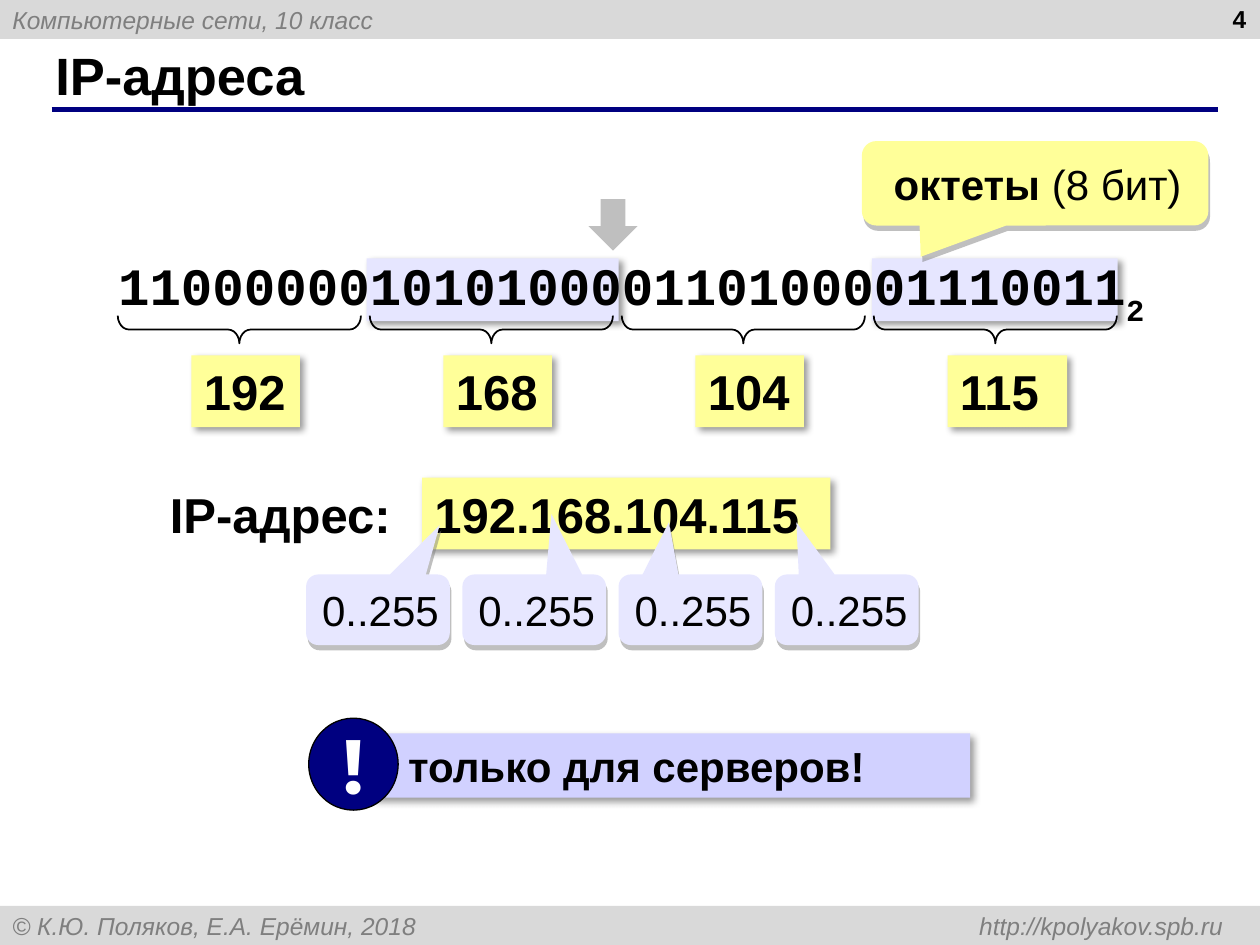
"""Build the slide on IP addresses and their octets."""
from lxml.etree import SubElement
from pptx import Presentation
from pptx.dml.color import RGBColor
from pptx.enum.shapes import MSO_CONNECTOR, MSO_SHAPE
from pptx.enum.text import MSO_ANCHOR, PP_ALIGN
from pptx.oxml.ns import qn
from pptx.util import Inches, Pt

SOFT = ("000000", 40, 4, 3, 45)
HARD = ("808080", 50, 0, 3.2, 72)
CALL = (0.06, 0.05, 0.02, 0.05)
YELLOW, LILAC, NAVY, GREY = "FFFF99", "E7E7FF", "000080", "D9D9D9"
LEFT, MID, RIGHT = PP_ALIGN.LEFT, PP_ALIGN.CENTER, PP_ALIGN.RIGHT
color = RGBColor.from_string

deck = Presentation()
deck.slide_width, deck.slide_height = Inches(10), Inches(7.5)
slide = deck.slides.add_slide(deck.slide_layouts[5])
shapes = slide.shapes


def draw(kind, place, fill=None, line=None, width=1, shade=None, adj=()):
    """Add a preset shape with its fill, outline, shadow and adjustments."""
    item = shapes.add_shape(kind, *[Inches(n) for n in place])
    item.shadow.inherit = False
    if fill:
        item.fill.solid()
        item.fill.fore_color.rgb = color(fill)
    else:
        item.fill.background()
    if line:
        item.line.color.rgb = color(line)
        item.line.width = Pt(width)
    else:
        item.line.fill.background()
    for i, value in enumerate(adj):
        item.adjustments[i] = value
    if shade:
        tint, alpha, blur, dist, angle = shade
        effects = item._element.spPr.find(qn("a:effectLst"))
        outer = SubElement(effects, qn("a:outerShdw"), blurRad=str(Pt(blur)), dist=str(Pt(dist)),
                           dir=str(angle * 60000), algn="tl", rotWithShape="0")
        rgb = SubElement(outer, qn("a:srgbClr"), val=tint)
        SubElement(rgb, qn("a:alpha"), val=str(alpha * 1000))
    return item


def write(item, runs, size, align=LEFT, ink="000000", font="Arial", italic=False,
          inset=(0.1, 0.05, 0.1, 0.05), anchor=MSO_ANCHOR.MIDDLE):
    """Fill one paragraph with (text, bold) runs and return it."""
    frame = item.text_frame
    frame.word_wrap = True
    frame.vertical_anchor = anchor
    frame.margin_left, frame.margin_top, frame.margin_right, frame.margin_bottom = [
        Inches(n) for n in inset]
    para = frame.paragraphs[0]
    para.alignment = align
    for text, bold in runs:
        run = para.add_run()
        run.text = text
        run.font.name, run.font.size = font, Pt(size)
        run.font.bold, run.font.italic = bold, italic
        run.font.color.rgb = color(ink)
    return para


bars = [(0, "Компьютерные сети, 10 класс"),
        (7.19, "© К.Ю. Поляков, Е.А. Ерёмин, 2018\thttp://kpolyakov.spb.ru")]
for y, text in bars:
    bar = draw(MSO_SHAPE.RECTANGLE, (0, y, 10, 0.31), GREY)
    para = write(bar, [(text, False)], 14, ink="7F7F7F", italic=True)
    tabs = SubElement(para._p.get_or_add_pPr(), qn("a:tabLst"))
    SubElement(tabs, qn("a:tab"), pos=str(Inches(9.61)), algn="r")

rule = shapes.add_connector(MSO_CONNECTOR.STRAIGHT, Inches(0.41), Inches(0.87),
                            Inches(9.67), Inches(0.87))
rule.line.color.rgb = color(NAVY)
rule.line.width = Pt(3)
SubElement(rule._element.spPr, qn("a:effectLst"))

title = shapes.title
title.left, title.top, title.width, title.height = [Inches(n) for n in (0.34, 0.33, 9.16, 0.52)]
write(title, [("IP-адреса", True)], 30)

page = shapes.add_textbox(Inches(7.66), Inches(-0.02), Inches(2.33), Inches(0.52))
write(page, [("4", True)], 14, RIGHT, anchor=MSO_ANCHOR.TOP)

for x, w in [(2.91, 2), (6.92, 1.95)]:
    draw(MSO_SHAPE.RECTANGLE, (x, 2.05, w, 0.5), "E6E6FF", shade=SOFT)
note = draw(MSO_SHAPE.ROUNDED_RECTANGULAR_CALLOUT, (6.84, 1.12, 2.75, 0.67), YELLOW,
            shade=HARD, adj=(-0.33, 0.87, 0.17))
write(note, [("октеты", True), (" (8 бит)", False)], 24, MID, inset=CALL)

bits = shapes.add_textbox(Inches(0.36), Inches(2), Inches(9.3), Inches(0.61))
para = write(bits, [("11000000101010000110100001110011", True), ("2", True)], 30, MID,
             font="Courier New")
para.runs[1]._r.get_or_add_rPr().set("baseline", "-30000")
draw(MSO_SHAPE.DOWN_ARROW, (4.67, 1.58, 0.39, 0.41), "BFBFBF")

for i, (octet, w) in enumerate([("192", 0.86), ("168", 0.86), ("104", 0.86), ("115", 0.95)]):
    brace = draw(MSO_SHAPE.LEFT_BRACE, (1.79 + 2 * i, 1.65, 0.22, 1.93), line="000000",
                 adj=(0.41, 0.5))
    brace.rotation = 270
    box = draw(MSO_SHAPE.RECTANGLE, (1.52 + 2 * i, 2.82, w, 0.57), YELLOW, shade=SOFT)
    write(box, [(octet, True)], 28, inset=(0.1, 0.05, 0, 0.05))

label = shapes.add_textbox(Inches(1.25), Inches(3.79), Inches(2.08), Inches(0.57))
write(label, [("IP-адрес:", True)], 28)
whole = draw(MSO_SHAPE.RECTANGLE, (3.35, 3.79, 3.24, 0.57), YELLOW, shade=SOFT)
write(whole, [("192.168.104.115", True)], 28)

for i, tip in enumerate([(0.43, -1.2), (0.12, -1.36), (-0.15, -1.24), (-0.35, -1.24)]):
    span = draw(MSO_SHAPE.ROUNDED_RECTANGULAR_CALLOUT, (2.43 + 1.24 * i, 4.56, 1.14, 0.56),
                LILAC, shade=HARD, adj=(*tip, 0.17))
    write(span, [("0..255", False)], 24, MID, inset=CALL)

strip = draw(MSO_SHAPE.RECTANGLE, (2.96, 5.82, 4.74, 0.51), "D1D1FF", shade=SOFT)
write(strip, [("только для серверов!", True)], 24, inset=(0.28, 0.05, 0.1, 0.05))
mark = draw(MSO_SHAPE.OVAL, (2.45, 5.7, 0.71, 0.73), NAVY, "000000", 0.75)
write(mark, [("!", True)], 44, MID, "FFFFFF", "Montserrat", inset=(0, 0, 0, 0))

deck.save("out.pptx")
